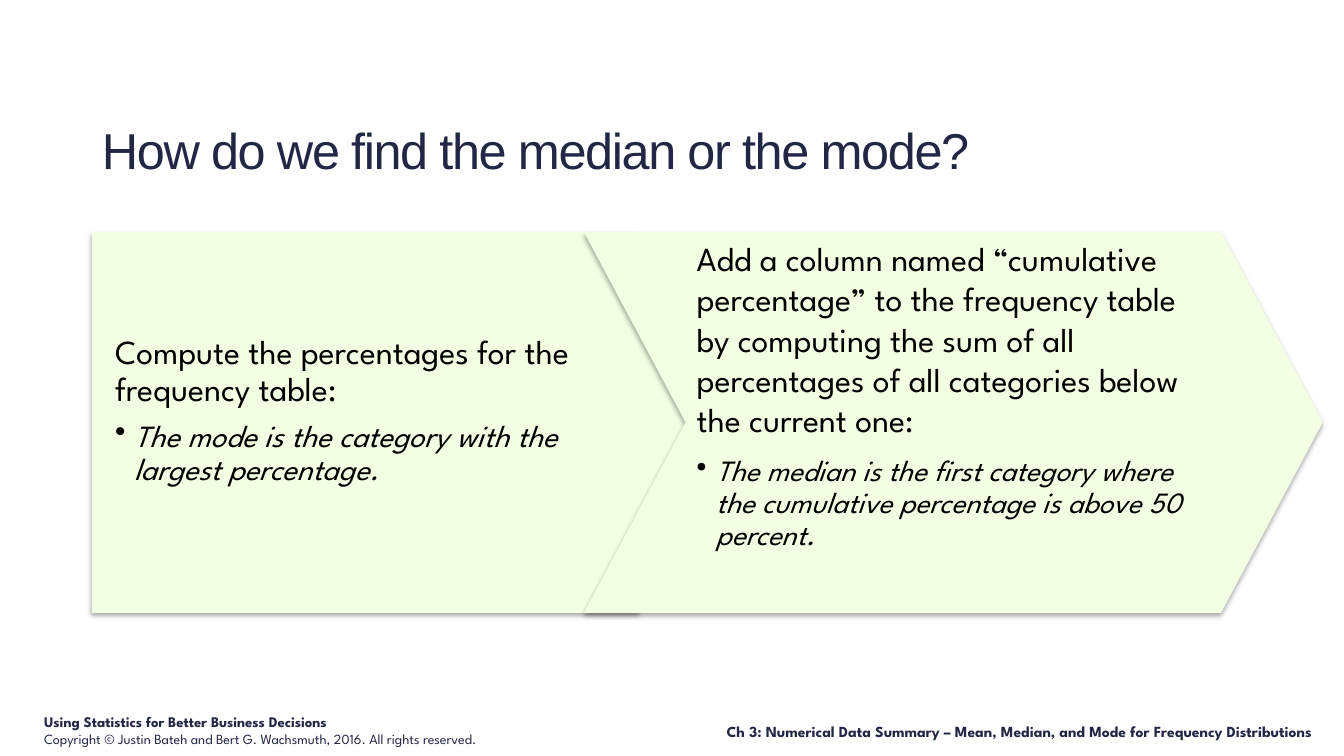
from dataclasses import dataclass, field

from lxml.etree import SubElement as Sub
from pptx import Presentation
from pptx.dml.color import RGBColor
from pptx.enum.text import MSO_ANCHOR as Anchor, MSO_AUTO_SIZE as Auto, PP_ALIGN as Align
from pptx.oxml.ns import qn
from pptx.util import Emu, Inches, Pt

NAVY = RGBColor(0x21, 0x27, 0x45)
BLACK = RGBColor(0, 0, 0)
MINT = RGBColor(0xF2, 0xFF, 0xE3)
SPARTAN = "League Spartan"
WIDE, HIGH = Inches(13.33), Inches(7.5)
TOP, MID, LOW = 30.67, 55.87, 81.07


@dataclass
class Para:
    text: str
    font: dict
    form: dict = field(default_factory=dict)
    bullet: bool = False


@dataclass
class Step:
    points: list[tuple[float, float]]
    inset: tuple[float, float, float, float]
    paras: list[Para]


@dataclass
class Note:
    box: tuple[float, float, float, float]
    anchor: Anchor
    paras: list[Para]


def across(share: float) -> Emu:
    """Percent of the slide's width."""
    return Emu(round(WIDE * share / 100))


def down(share: float) -> Emu:
    """Percent of the slide's height."""
    return Emu(round(HIGH * share / 100))


def place(box: tuple) -> tuple:
    left, top, width, height = box
    return across(left), down(top), across(width), down(height)


def apply(target, values: dict) -> None:
    for name, value in values.items():
        setattr(target, name, value)


def write(frame, paras: list[Para], color: RGBColor, face: str = SPARTAN) -> None:
    for i, item in enumerate(paras):
        para = frame.add_paragraph() if i else frame.paragraphs[0]
        apply(para, {"alignment": Align.LEFT} | item.form)
        run = para.add_run()
        run.text = item.text
        apply(run.font, {"name": face} | item.font)
        run.font.color.rgb = color
        if item.bullet:
            props = para._p.get_or_add_pPr()
            props.set("marL", str(Inches(0.19)))
            props.set("indent", str(-Inches(0.19)))
            Sub(props, qn("a:buChar"), char="•")


def shade(shape) -> None:
    """Soft shadow straight below the shape."""
    shape.shadow.inherit = False
    effects = shape._element.spPr.find(qn("a:effectLst"))
    outer = Sub(effects, qn("a:outerShdw"), blurRad=str(Pt(3.5)), dist=str(Pt(2.2)),
                dir="5400000", algn="ctr", rotWithShape="0")
    tint = Sub(outer, qn("a:srgbClr"), val="000000")
    Sub(tint, qn("a:alpha"), val="32000")


def draw_step(slide, step: Step) -> None:
    first, *rest = [(across(x), down(y)) for x, y in step.points]
    pen = slide.shapes.build_freeform(*first)
    pen.add_line_segments(rest, close=True)
    shape = pen.convert_to_shape()
    shape.fill.solid()
    shape.fill.fore_color.rgb = MINT
    shape.line.fill.background()
    shade(shape)
    left, top, right, low = step.inset
    frame = shape.text_frame
    apply(frame, {"word_wrap": True, "vertical_anchor": Anchor.TOP,
                  "margin_left": across(left), "margin_top": down(top),
                  "margin_right": across(right), "margin_bottom": down(low)})
    write(frame, step.paras, BLACK)


def draw_note(slide, note: Note) -> None:
    frame = slide.shapes.add_textbox(*place(note.box)).text_frame
    apply(frame, {"word_wrap": True, "vertical_anchor": note.anchor})
    write(frame, note.paras, NAVY)


def draw_title(slide, text: str) -> None:
    title = slide.shapes.title
    apply(title, dict(zip(("left", "top", "width", "height"),
                          place((6.83, 15.07, 89.72, 13.07)))))
    frame = title.text_frame
    apply(frame, {"word_wrap": True, "auto_size": Auto.NONE, "vertical_anchor": Anchor.TOP})
    write(frame, [Para(text, {"size": Pt(36)})], NAVY, "Arial")
    frame.paragraphs[0].runs[0].font._element.set("spc", "-100")


STEPS = [
    Step([(6.83, TOP), (47.49, TOP), (53.94, MID), (47.49, LOW), (6.83, LOW)],
         (1.73, 13.73, 10.28, 0.8),
         [Para("Compute the percentages for the frequency table:", {"size": Pt(24)},
               {"line_spacing": 0.9, "space_after": Pt(9)}),
          Para("The mode is the category with the largest percentage.",
               {"size": Pt(22), "italic": True}, {"line_spacing": 0.9}, True)]),
    Step([(43.44, TOP), (90.85, TOP), (98.42, MID), (90.85, LOW), (43.44, LOW), (51.01, MID)],
         (8.4, 0.8, 8.4, 0.8),
         [Para("Add a column named “cumulative percentage” to the frequency table by "
               "computing the sum of all percentages of all categories below the current one:",
               {"size": Pt(24)}, {"space_before": Pt(12)}),
          Para("The median is the first category where the cumulative percentage is "
               "above 50 percent.", {"size": Pt(21), "italic": True},
               {"line_spacing": 0.9, "space_before": Pt(12)}, True)]),
]
NOTES = [
    Note((2.55, 93.6, 39.61, 5.33), Anchor.TOP,
         [Para("Using Statistics for Better Business Decisions",
               {"size": Pt(10.5), "bold": True}),
          Para("Copyright © Justin Bateh and Bert G. Wachsmuth, 2016. All rights reserved.",
               {"size": Pt(10)})]),
    Note((43.44, 94.8, 54.99, 3.87), Anchor.BOTTOM,
         [Para("Ch 3: Numerical Data Summary – Mean, Median, and Mode for Frequency "
               "Distributions", {"size": Pt(11), "bold": True},
               {"alignment": Align.RIGHT})]),
]


def main() -> None:
    deck = Presentation()
    apply(deck, {"slide_width": WIDE, "slide_height": HIGH})
    slide = deck.slides.add_slide(deck.slide_layouts[5])
    draw_title(slide, "How do we find the median or the mode?")
    for step in STEPS:
        draw_step(slide, step)
    for note in NOTES:
        draw_note(slide, note)
    deck.save("out.pptx")


if __name__ == "__main__":
    main()
